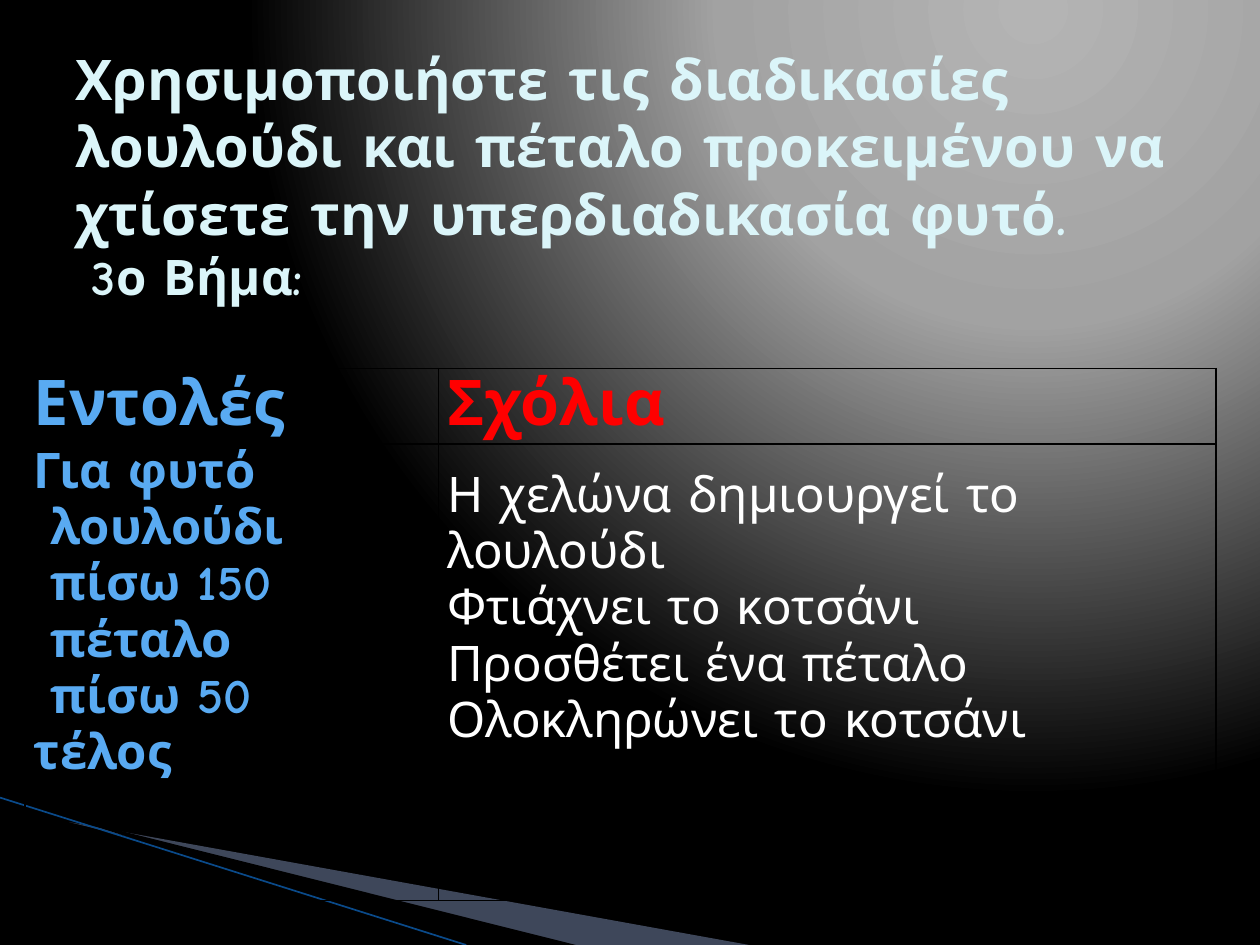
import dataclasses

import lxml.etree
import pptx
import pptx.dml.color
import pptx.enum.shapes
import pptx.enum.text
import pptx.oxml
import pptx.oxml.ns
import pptx.util

ALIGN = pptx.enum.text.PP_ALIGN
QN = pptx.oxml.ns.qn


@dataclasses.dataclass(frozen=True)
class Theme:
    font: str = "Comic Neue"
    title: str = "DBF5F9"
    command: str = "59AAF2"
    comment_head: str = "FF0000"
    comment: str = "FFFFFF"
    wedge: str = "9DB2E1"
    stripe: str = "0A4A8A"
    black: str = "000000"
    glow: tuple = ((0, "B4B4B4"), (40, "A2A2A2"), (100, "000000"))
    head_size: int = 36
    title_size: int = 32
    body_size: int = 28
    step_indent: float = 0.13


@dataclasses.dataclass(frozen=True)
class CellText:
    lines: tuple
    color: str
    size: int
    bold: bool = True
    align: ALIGN = ALIGN.LEFT
    top: float = 0


class SlideBuilder:
    """Places elements by shares of the slide's width and height."""

    def __init__(self, presentation, theme):
        self.theme = theme
        self.width = presentation.slide_width
        self.height = presentation.slide_height
        self.slide = presentation.slides.add_slide(presentation.slide_layouts[5])
        self.shapes = self.slide.shapes

    def point(self, x, y):
        return round(x * self.width), round(y * self.height)

    def color(self, value):
        return pptx.dml.color.RGBColor.from_string(value)

    def background(self):
        fill = self.slide.background.fill
        fill.gradient()
        gradient = self.slide.background._cSld.find(".//" + QN("a:gradFill"))
        for child in list(gradient):
            gradient.remove(child)
        stops = lxml.etree.SubElement(gradient, QN("a:gsLst"))
        for position, value in self.theme.glow:
            stop = lxml.etree.SubElement(stops, QN("a:gs"), pos=str(position * 1000))
            lxml.etree.SubElement(stop, QN("a:srgbClr"), val=value)
        circle = lxml.etree.SubElement(gradient, QN("a:path"), path="circle")
        lxml.etree.SubElement(circle, QN("a:fillToRect"),
                              l="65000", t="0", r="0", b="98000")

    def wedge(self, points, color, alpha=100):
        start, *others = [self.point(x, y) for x, y in points]
        builder = self.shapes.build_freeform(*start)
        builder.add_line_segments(others, close=True)
        shape = builder.convert_to_shape()
        shape.shadow.inherit = False
        shape.line.fill.background()
        shape.fill.solid()
        shape.fill.fore_color.rgb = self.color(color)
        value = shape.fill._xPr.find(".//" + QN("a:srgbClr"))
        lxml.etree.SubElement(value, QN("a:alpha"), val=str(alpha * 1000))

    def stripe(self, start, end):
        line = self.shapes.add_connector(
            pptx.enum.shapes.MSO_CONNECTOR.STRAIGHT,
            *self.point(*start), *self.point(*end))
        line.line.color.rgb = self.color(self.theme.stripe)
        line.line.width = pptx.util.Pt(0.95)
        lxml.etree.SubElement(line._element.spPr, QN("a:effectLst"))

    def format(self, paragraph, text, size, color, bold, align):
        """Writes one line; a leading space marks an indented line."""
        paragraph.text = text.strip()
        paragraph.alignment = align
        if text.startswith(" "):
            indent = pptx.util.Inches(self.theme.step_indent)
            properties = paragraph._p.get_or_add_pPr()
            properties.set("marL", str(indent))
            properties.set("indent", "0")
        font = paragraph.font
        font.name = self.theme.font
        font.size = pptx.util.Pt(size)
        font.bold = bold
        font.color.rgb = self.color(color)

    def title(self, lines, position, size):
        shape = self.shapes.title
        shape.left, shape.top = self.point(*position)
        shape.width, shape.height = self.point(*size)
        self.shapes._spTree.append(shape._element)  # above the decoration
        frame = shape.text_frame
        frame.word_wrap = True
        frame.auto_size = pptx.enum.text.MSO_AUTO_SIZE.NONE
        frame.vertical_anchor = pptx.enum.text.MSO_ANCHOR.MIDDLE
        for index, (text, points) in enumerate(lines):
            paragraph = frame.add_paragraph() if index else frame.paragraphs[0]
            paragraph.space_before = pptx.util.Pt(0)
            self.format(paragraph, text, points, self.theme.title, True, ALIGN.LEFT)

    def border(self, cell):
        properties = cell._tc.get_or_add_tcPr()
        for index, side in enumerate(("lnL", "lnR", "lnT", "lnB")):
            line = pptx.oxml.parse_xml(
                f'<a:{side} {pptx.oxml.ns.nsdecls("a")} w="12700"><a:solidFill>'
                f'<a:srgbClr val="{self.theme.black}"/></a:solidFill></a:{side}>')
            properties.insert(index, line)

    def table(self, rows, position, columns, heights):
        size = self.point(sum(columns), sum(heights))
        frame = self.shapes.add_table(len(rows), len(columns),
                                      *self.point(*position), *size)
        table = frame.table
        table.first_row = table.horz_banding = False
        for column, share in zip(table.columns, columns):
            column.width = round(share * self.width)
        for row, share in zip(table.rows, heights):
            row.height = round(share * self.height)
        for row, contents in zip(table.rows, rows):
            for cell, content in zip(row.cells, contents):
                self.cell(cell, content)

    def cell(self, cell, content):
        cell.fill.background()
        self.border(cell)
        cell.margin_left = cell.margin_right = pptx.util.Inches(0.07)
        cell.margin_top = pptx.util.Inches(content.top)
        cell.margin_bottom = 0
        frame = cell.text_frame
        for index, text in enumerate(content.lines):
            paragraph = frame.add_paragraph() if index else frame.paragraphs[0]
            self.format(paragraph, text, content.size, content.color,
                        content.bold, content.align)


def main():
    presentation = pptx.Presentation()
    presentation.slide_width = pptx.util.Inches(10)
    presentation.slide_height = pptx.util.Inches(7.5)
    theme = Theme()
    builder = SlideBuilder(presentation, theme)

    # Background glow and corner decoration
    builder.background()
    builder.wedge([(0.055, 0.87), (0.595, 1), (0.456, 1)], theme.wedge, alpha=40)
    builder.wedge([(0.053, 0.865), (0.457, 1), (0.372, 1)], theme.black)
    builder.stripe((0, 0.844), (0.37, 1))

    # Title with the step label
    builder.title(
        [("Χρησιμοποιήστε τις διαδικασίες λουλούδι και πέταλο προκειμένου να "
          "χτίσετε την υπερδιαδικασία φυτό.", theme.title_size),
         (" 3ο Βήμα:", theme.body_size)],
        position=(0.05, 0.04), size=(0.9, 0.29))

    # Commands and comments
    commands = ("Για φυτό", " λουλούδι", " πίσω 150", " πέταλο", " πίσω 50", "τέλος")
    comments = ("Η χελώνα δημιουργεί το λουλούδι", "Φτιάχνει το κοτσάνι",
                "Προσθέτει ένα πέταλο", "Ολοκληρώνει το κοτσάνι")
    builder.table(
        [[CellText(("Εντολές",), theme.command, theme.head_size, align=ALIGN.JUSTIFY),
          CellText(("Σχόλια",), theme.comment_head, theme.head_size)],
         [CellText(commands, theme.command, theme.body_size, align=ALIGN.JUSTIFY),
          CellText(comments, theme.comment, theme.body_size, bold=False, top=0.19)]],
        position=(0.02, 0.39), columns=(0.328, 0.617), heights=(0.08, 0.483))

    presentation.save("out.pptx")


if __name__ == "__main__":
    main()
